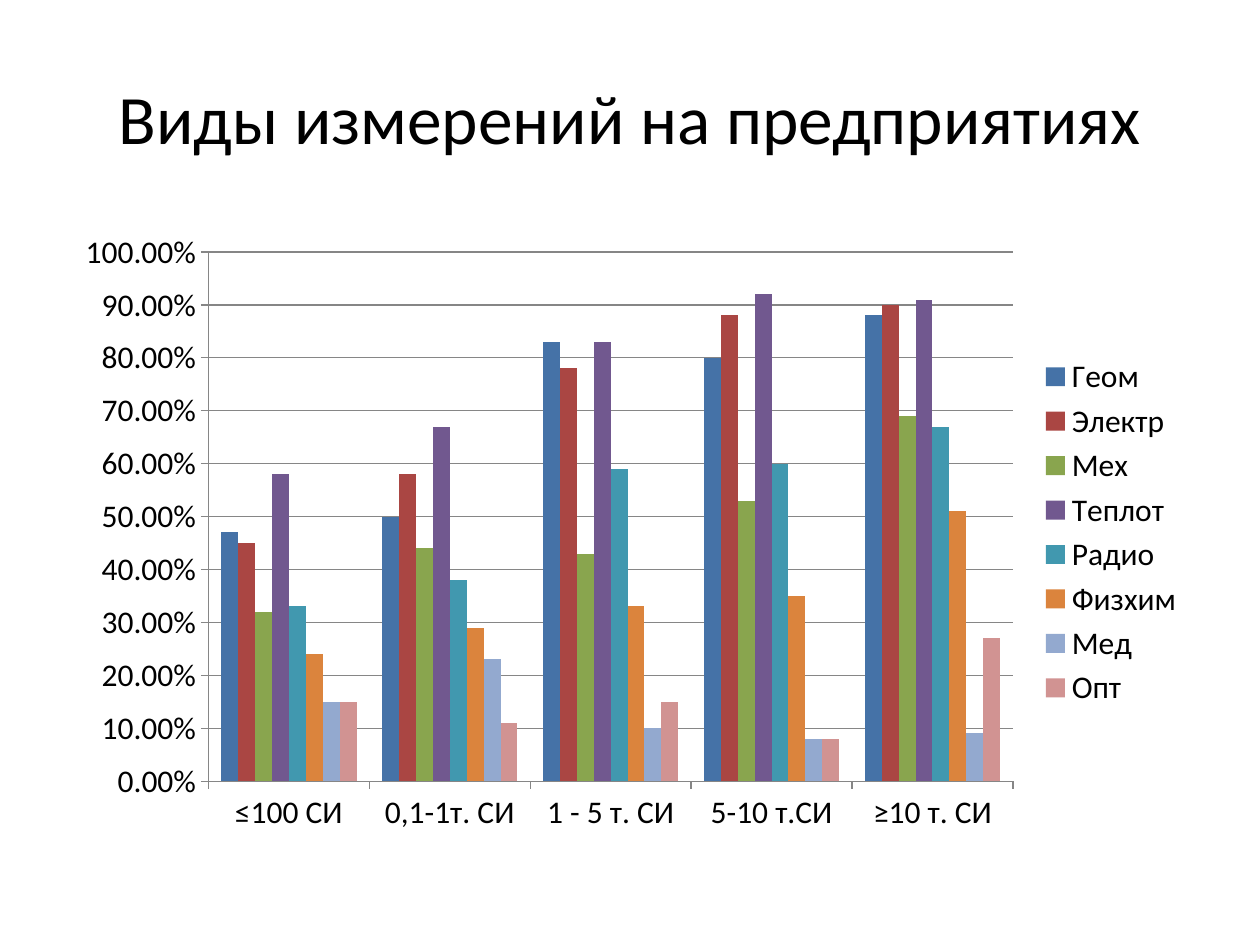
import pptx
import pptx.chart.data
import pptx.dml.color
import pptx.enum.chart
import pptx.enum.text
import pptx.util

Pt = pptx.util.Pt
rgb = pptx.dml.color.RGBColor.from_string

THEME = {
    "font": "Calibri",
    "text": "000000",
    "line": "868686",
    "title_size": 39.6,
    "chart_size": 18,
}

CATEGORIES = ["≤100 СИ", "0,1-1т. СИ", "1 - 5 т. СИ", "5-10 т.СИ", "≥10 т. СИ"]

# Measurement type, bar colour, share of enterprises per category
MEASUREMENTS = [
    ("Геом", "4572A7", [0.47, 0.50, 0.83, 0.80, 0.88]),
    ("Электр", "AA4643", [0.45, 0.58, 0.78, 0.88, 0.90]),
    ("Мех", "89A54E", [0.32, 0.44, 0.43, 0.53, 0.69]),
    ("Теплот", "71588F", [0.58, 0.67, 0.83, 0.92, 0.91]),
    ("Радио", "4198AF", [0.33, 0.38, 0.59, 0.60, 0.67]),
    ("Физхим", "DB843D", [0.24, 0.29, 0.33, 0.35, 0.51]),
    ("Мед", "93A9CF", [0.15, 0.23, 0.10, 0.08, 0.09]),
    ("Опт", "D19392", [0.15, 0.11, 0.15, 0.08, 0.27]),
]


def style_font(font, size):
    font.name = THEME["font"]
    font.size = Pt(size)
    font.color.rgb = rgb(THEME["text"])


def style_line(line):
    line.color.rgb = rgb(THEME["line"])
    line.width = Pt(0.75)


deck = pptx.Presentation()
deck.slide_width, deck.slide_height = Pt(720), Pt(540)
page = deck.slides.add_slide(deck.slide_layouts[5])

# Title
title = page.shapes.title
title.left, title.top, title.width, title.height = Pt(36), Pt(21.6), Pt(648), Pt(90)
title.text_frame.word_wrap = True
title.text_frame.vertical_anchor = pptx.enum.text.MSO_ANCHOR.MIDDLE
para = title.text_frame.paragraphs[0]
para.alignment = pptx.enum.text.PP_ALIGN.CENTER
span = para.add_run()
span.text = "Виды измерений на предприятиях"
style_font(span.font, THEME["title_size"])

# Column chart
chart_data = pptx.chart.data.CategoryChartData(number_format="0.00%")
chart_data.categories = CATEGORIES
for name, color, shares in MEASUREMENTS:
    chart_data.add_series(name, shares)
chart = page.shapes.add_chart(
    pptx.enum.chart.XL_CHART_TYPE.COLUMN_CLUSTERED,
    Pt(36), Pt(126), Pt(648), Pt(356.4), chart_data,
).chart
chart.has_title = False
style_font(chart.font, THEME["chart_size"])

# Bars
plot = chart.plots[0]
plot.gap_width = 150
plot.overlap = 0
plot.vary_by_categories = False
for series, (name, color, shares) in zip(plot.series, MEASUREMENTS):
    series.format.fill.solid()
    series.format.fill.fore_color.rgb = rgb(color)
    series.invert_if_negative = False

# Axes
for axis in (chart.category_axis, chart.value_axis):
    axis.major_tick_mark = pptx.enum.chart.XL_TICK_MARK.OUTSIDE
    axis.minor_tick_mark = pptx.enum.chart.XL_TICK_MARK.NONE
    style_line(axis.format.line)
shares_axis = chart.value_axis
shares_axis.minimum_scale = 0
shares_axis.maximum_scale = 1
shares_axis.major_unit = 0.1
shares_axis.tick_labels.number_format = "0.00%"
shares_axis.tick_labels.number_format_is_linked = False
shares_axis.has_major_gridlines = True
style_line(shares_axis.major_gridlines.format.line)

# Legend
chart.has_legend = True
chart.legend.position = pptx.enum.chart.XL_LEGEND_POSITION.RIGHT
chart.legend.include_in_layout = False

deck.save("out.pptx")
